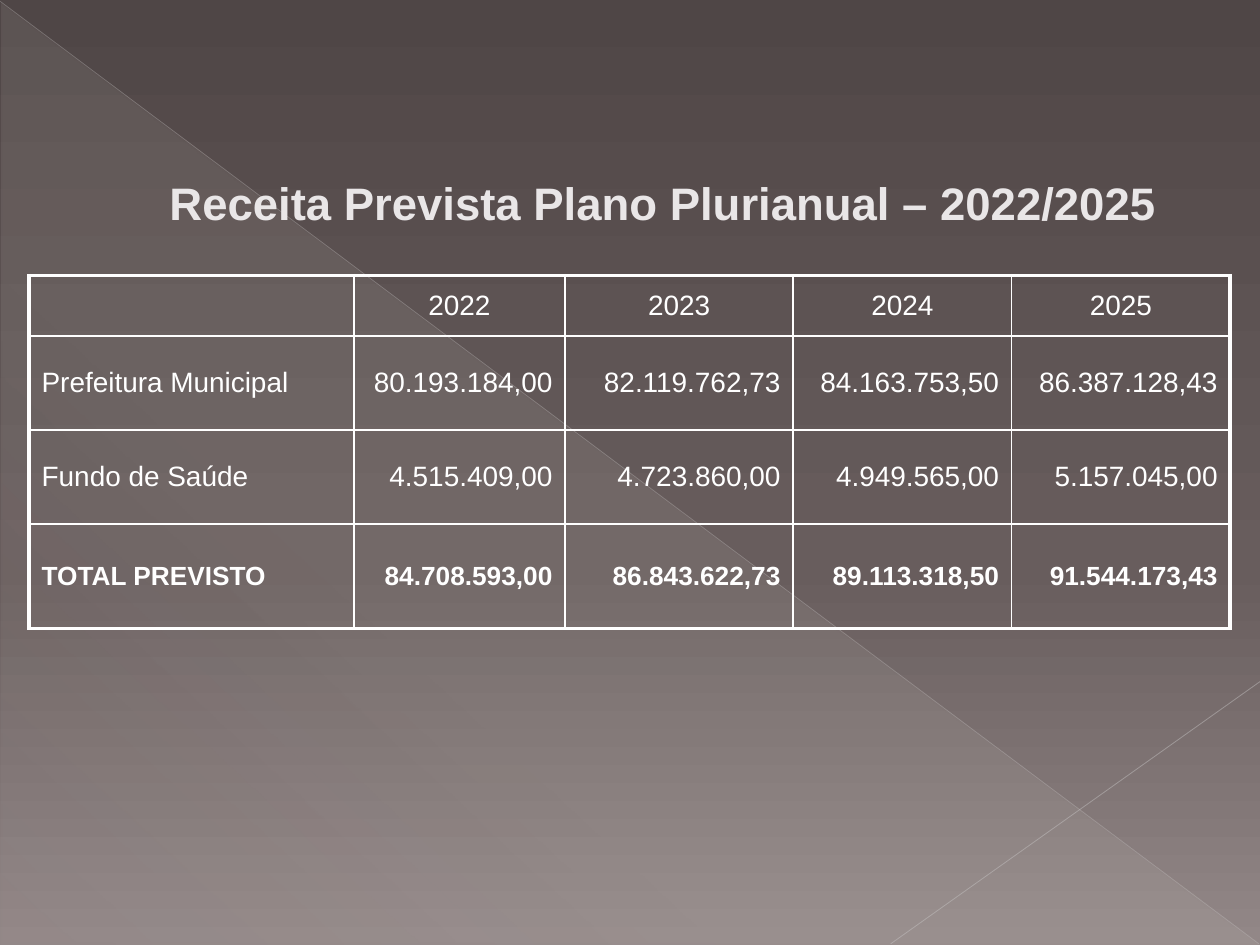
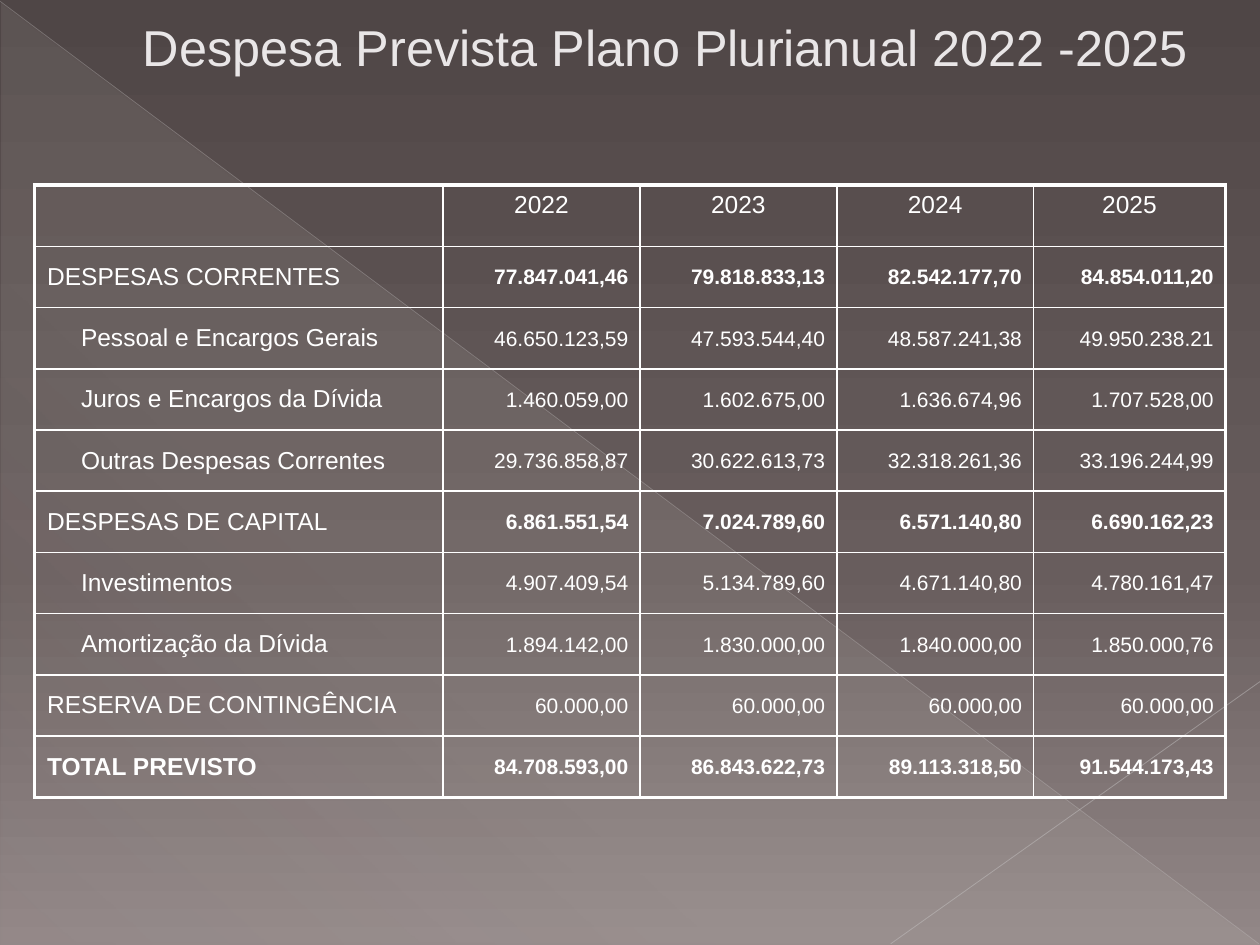
import pptx
import pptx.chart.data
import pptx.dml.color
import pptx.enum.shapes
import pptx.enum.text
import pptx.oxml
import pptx.oxml.ns
import pptx.util
from lxml import etree

Pt = pptx.util.Pt
RGB = pptx.dml.color.RGBColor
ALIGN = pptx.enum.text.PP_ALIGN
ANCHOR = pptx.enum.text.MSO_ANCHOR
qn = pptx.oxml.ns.qn

WHITE = RGB(0xFF, 0xFF, 0xFF)
TITLE = RGB(0xE9, 0xE6, 0xE7)
DARK = RGB(0x4F, 0x46, 0x46)
MID = RGB(0x68, 0x5D, 0x5D)
PALE = RGB(0x92, 0x87, 0x87)
CREAM = RGB(0xE9, 0xE5, 0xDC)
FONT = "Arial"
WIDE, HIGH = 720, 540
THICK, THIN = 2.25, 1

BACK = [(0, DARK, 100), (60, MID, 100), (100, PALE, 100)]
SHEEN = [(0, CREAM, 10), (70, CREAM, 8), (100, CREAM, 1)]
RULES = [
    ((0, 0.7), (719.3, 539.3), RGB(0xC1, 0xBE, 0xBE), 0.39, 35),
    ((720, 389.5), (509, 539.3), RGB(0xC7, 0xC5, 0xC5), 0.47, 45),
]
YEARS = ["2022", "2023", "2024", "2025"]
TOTAL = ("TOTAL PREVISTO", 0, True,
         ["84.708.593,00", "86.843.622,73", "89.113.318,50", "91.544.173,43"])

PAGES = [
    {
        "title": "Receita Prevista Plano Plurianual – 2022/2025",
        "box": (0, 33.8, 720, 198.7), "size": 26, "bold": True, "lift": 35.5,
        "spot": (16.6, 157.5),
        "cols": [185.6, 120.7, 130.3, 124.9, 124.9],
        "rows": [34.5, 53.7, 53.7, 59.8],
        "label": 16, "value": 16, "total": (15, 15),
        "head": ANCHOR.MIDDLE, "inset": (7.2, 3.6, 7.2, 3.6),
        "lines": [
            ("Prefeitura Municipal", 0, False,
             ["80.193.184,00", "82.119.762,73", "84.163.753,50", "86.387.128,43"]),
            ("Fundo de Saúde", 0, False,
             ["4.515.409,00", "4.723.860,00", "4.949.565,00", "5.157.045,00"]),
            TOTAL,
        ],
    },
    {
        "title": "Despesa Prevista Plano Plurianual 2022 -2025",
        "box": (16.6, 9.4, 689, 65.5), "size": 28.8, "bold": False, "lift": 31.5,
        "spot": (19.7, 105.8),
        "cols": [233.5, 112.5, 112.5, 112.5, 109.6],
        "rows": [35] * 10,
        "label": 14, "value": 12, "total": (14, 12),
        "head": ANCHOR.TOP, "inset": (0.7, 0.7, 6.6, 0),
        "lines": [
            ("DESPESAS CORRENTES", 0, True,
             ["77.847.041,46", "79.818.833,13", "82.542.177,70", "84.854.011,20"]),
            ("Pessoal e Encargos Gerais", 1, False,
             ["46.650.123,59", "47.593.544,40", "48.587.241,38", "49.950.238.21"]),
            ("Juros e Encargos da Dívida", 1, False,
             ["1.460.059,00", "1.602.675,00", "1.636.674,96", "1.707.528,00"]),
            ("Outras Despesas Correntes", 1, False,
             ["29.736.858,87", "30.622.613,73", "32.318.261,36", "33.196.244,99"]),
            ("DESPESAS DE CAPITAL", 0, True,
             ["6.861.551,54", "7.024.789,60", "6.571.140,80", "6.690.162,23"]),
            ("Investimentos", 1, False,
             ["4.907.409,54", "5.134.789,60", "4.671.140,80", "4.780.161,47"]),
            ("Amortização da Dívida", 1, False,
             ["1.894.142,00", "1.830.000,00", "1.840.000,00", "1.850.000,76"]),
            ("RESERVA DE CONTINGÊNCIA", 0, False, ["60.000,00"] * 4),
            TOTAL,
        ],
    },
]


def tint(node, color, alpha):
    hue = etree.SubElement(node, qn("a:srgbClr"), val=str(color))
    if alpha < 100:
        etree.SubElement(hue, qn("a:alpha"), val=str(alpha * 1000))


def grade(fill, host, stops, angle):
    fill.gradient()
    grad = host.find(".//" + qn("a:gradFill"))
    group = grad.find(qn("a:gsLst"))
    for old in list(group):
        group.remove(old)
    for place, color, alpha in stops:
        stop = etree.SubElement(group, qn("a:gs"), pos=str(place * 1000))
        tint(stop, color, alpha)
    grad.find(qn("a:lin")).set("ang", str(angle * 60000))


def backdrop(slide):
    grade(slide.background.fill, slide.element, BACK, 90)
    wedge = slide.shapes.add_shape(
        pptx.enum.shapes.MSO_SHAPE.RIGHT_TRIANGLE,
        Pt(0.7), Pt(1.4), Pt(719.3), Pt(538.6))
    wedge.shadow.inherit = False
    wedge.line.fill.background()
    grade(wedge.fill, wedge.element, SHEEN, 133)
    for start, end, color, width, alpha in RULES:
        rule = slide.shapes.add_connector(
            pptx.enum.shapes.MSO_CONNECTOR.STRAIGHT,
            *[Pt(v) for v in start + end])
        rule.line.width = Pt(width)
        rule.line.color.rgb = color
        hue = rule.element.find(".//" + qn("a:srgbClr"))
        etree.SubElement(hue, qn("a:alpha"), val=str(alpha * 1000))
        etree.SubElement(rule.element.spPr, qn("a:effectLst"))


def style(para, text, size, bold, color, align):
    para.text = text
    para.alignment = align
    para.font.name = FONT
    para.font.size = Pt(size)
    para.font.bold = bold
    para.font.color.rgb = color


def heading(slide, page):
    frame = slide.shapes.add_textbox(*[Pt(v) for v in page["box"]]).text_frame
    frame.word_wrap = True
    frame.vertical_anchor = ANCHOR.MIDDLE
    frame.margin_top = 0
    frame.margin_bottom = Pt(page["lift"])
    para = frame.paragraphs[0]
    style(para, page["title"], page["size"], page["bold"], TITLE, ALIGN.CENTER)
    props = para._p.get_or_add_pPr()
    props.set("marL", str(Pt(38.2)))
    props.set("indent", "0")


def border(cell, widths):
    props = cell._tc.get_or_add_tcPr()
    for spot, (side, width) in enumerate(zip("LRTB", widths)):
        edge = etree.Element(qn("a:ln" + side), w=str(Pt(width)))
        tint(etree.SubElement(edge, qn("a:solidFill")), WHITE, 100)
        props.insert(spot, edge)


def inset(cell, left, top, right, bottom):
    cell.margin_left, cell.margin_top = Pt(left), Pt(top)
    cell.margin_right, cell.margin_bottom = Pt(right), Pt(bottom)


def grid(slide, page):
    cols, rows = page["cols"], page["rows"]
    table = slide.shapes.add_table(
        len(rows), len(cols), *[Pt(v) for v in page["spot"]],
        Pt(sum(cols)), Pt(sum(rows))).table
    table.first_row = table.horz_banding = False
    for col, width in zip(table.columns, cols):
        col.width = Pt(width)
    for row, height in zip(table.rows, rows):
        row.height = Pt(height)
    last, end = len(rows) - 1, len(cols) - 1
    for r in range(len(rows)):
        for c in range(len(cols)):
            cell = table.cell(r, c)
            cell.fill.background()
            cell.vertical_anchor = ANCHOR.MIDDLE
            border(cell, [THICK if outer else THIN
                          for outer in (c == 0, c == end, r == 0, r == last)])
    for c, year in enumerate(YEARS, 1):
        cell = table.cell(0, c)
        cell.vertical_anchor = page["head"]
        style(cell.text_frame.paragraphs[0], year, page["label"], False,
              WHITE, ALIGN.CENTER)
    for r, (name, level, bold, values) in enumerate(page["lines"], 1):
        big, small = page["total"] if r == last else (page["label"], page["value"])
        cell = table.cell(r, 0)
        inset(cell, 7.2 + 19.4 * level, 3.6, 7.2, 3.6)
        style(cell.text_frame.paragraphs[0], name, big, r == last,
              WHITE, ALIGN.LEFT)
        for c, value in enumerate(values, 1):
            cell = table.cell(r, c)
            inset(cell, *page["inset"])
            style(cell.text_frame.paragraphs[0], value, small, bold,
                  WHITE, ALIGN.RIGHT)


def main():
    deck = pptx.Presentation()
    deck.slide_width, deck.slide_height = Pt(WIDE), Pt(HIGH)
    for page in PAGES:
        slide = deck.slides.add_slide(deck.slide_layouts[6])
        backdrop(slide)
        heading(slide, page)
        grid(slide, page)
    deck.save("out.pptx")


if __name__ == "__main__":
    main()
